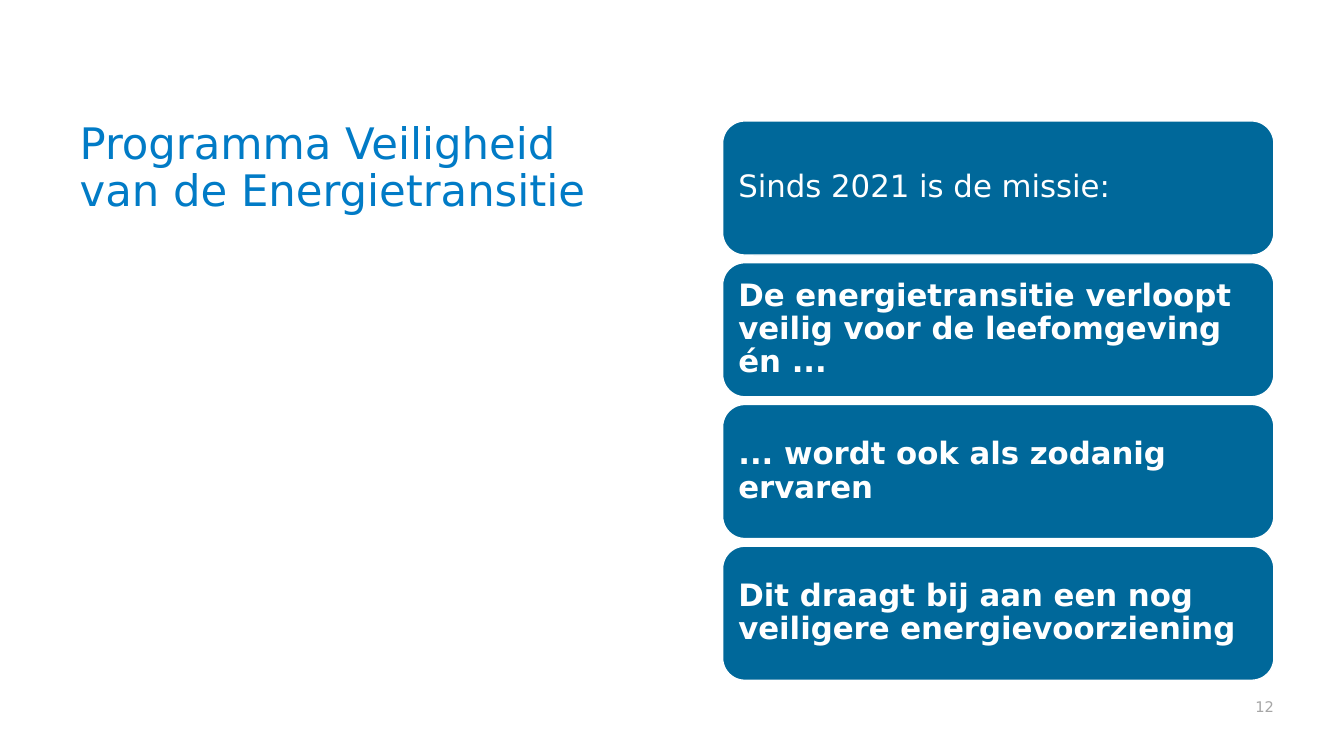
"""Builds the slide on the mission of the energy transition safety programme."""
from dataclasses import dataclass

import pptx
import pptx.dml.color
import pptx.enum.shapes
import pptx.enum.text
import pptx.shapes.autoshape
import pptx.slide
import pptx.text.text
import pptx.util
from pptx.dml.color import RGBColor
from pptx.enum.text import MSO_ANCHOR, PP_ALIGN
from pptx.util import Pt


@dataclass(frozen=True)
class Theme:
    """Colours and type sizes of the slide."""
    font: str = "DejaVu Sans"
    title: RGBColor = RGBColor.from_string("017BC6")
    card: RGBColor = RGBColor.from_string("00689A")
    white: RGBColor = RGBColor.from_string("FFFFFF")
    number: RGBColor = RGBColor.from_string("A6A6A6")
    title_size: float = 31
    card_size: float = 22
    number_size: float = 10.5


@dataclass(frozen=True)
class Card:
    """One statement of the mission."""
    text: str
    bold: bool = True


THEME = Theme()
COLUMN_LEFT, COLUMN_WIDTH = 516.2, 393.8
CARD_TOP, CARD_HEIGHT, CARD_PITCH = 86.4, 95.8, 101.25
CARD_INSET = 6.6
CARDS = (
    Card("Sinds 2021 is de missie:", bold=False),
    Card("De energietransitie verloopt veilig voor de leefomgeving én ..."),
    Card("... wordt ook als zodanig ervaren"),
    Card("Dit draagt bij aan een nog veiligere energievoorziening"),
)


def write_text(frame: pptx.text.text.TextFrame, text: str, size: float, color: RGBColor,
               anchor: MSO_ANCHOR, alignment: PP_ALIGN = PP_ALIGN.LEFT,
               line_spacing: float = 0.9, bold: bool = False) -> None:
    """Fill a text frame with one formatted paragraph."""
    frame.word_wrap = True
    frame.auto_size = pptx.enum.text.MSO_AUTO_SIZE.NONE
    frame.vertical_anchor = anchor
    frame.text = text
    paragraph = frame.paragraphs[0]
    paragraph.alignment = alignment
    paragraph.line_spacing = line_spacing
    paragraph.space_before = Pt(0)
    paragraph.font.name = THEME.font
    paragraph.font.size = Pt(size)
    paragraph.font.bold = bold
    paragraph.font.color.rgb = color


def place_title(slide: pptx.slide.Slide, text: str) -> None:
    """Move and format the title placeholder."""
    title = slide.shapes.title
    title.left, title.top = Pt(49.7), Pt(82.8)
    title.width, title.height = Pt(393.8), Pt(74.9)
    write_text(title.text_frame, text, THEME.title_size, THEME.title, MSO_ANCHOR.BOTTOM)


def add_card(slide: pptx.slide.Slide, card: Card, top: float) -> None:
    """Draw one rounded card with its statement."""
    shape = slide.shapes.add_shape(
        pptx.enum.shapes.MSO_SHAPE.ROUNDED_RECTANGLE,
        Pt(COLUMN_LEFT), Pt(top), Pt(COLUMN_WIDTH), Pt(CARD_HEIGHT))
    shape.shadow.inherit = False
    shape.fill.solid()
    shape.fill.fore_color.rgb = THEME.card
    shape.line.color.rgb = THEME.white
    shape.line.width = Pt(1)
    frame = shape.text_frame
    frame.margin_left = frame.margin_right = Pt(CARD_INSET)
    frame.margin_top = frame.margin_bottom = Pt(CARD_INSET)
    write_text(frame, card.text, THEME.card_size, THEME.white, MSO_ANCHOR.MIDDLE,
               bold=card.bold)


def add_page_number(slide: pptx.slide.Slide, number: str) -> None:
    """Write the page number under the cards."""
    box = slide.shapes.add_textbox(Pt(COLUMN_LEFT), Pt(489.6), Pt(COLUMN_WIDTH), Pt(25.2))
    box.text_frame.margin_right = Pt(0)
    write_text(box.text_frame, number, THEME.number_size, THEME.number,
               MSO_ANCHOR.BOTTOM, PP_ALIGN.RIGHT, line_spacing=1.0)


def main() -> None:
    """Build and save the presentation."""
    presentation = pptx.Presentation()
    presentation.slide_width, presentation.slide_height = Pt(960), Pt(540)
    slide = presentation.slides.add_slide(presentation.slide_layouts.get_by_name("Title Only"))
    place_title(slide, "Programma Veiligheid van de Energietransitie")
    for index, card in enumerate(CARDS):
        add_card(slide, card, CARD_TOP + index * CARD_PITCH)
    add_page_number(slide, "12")
    presentation.save("out.pptx")


if __name__ == "__main__":
    main()
